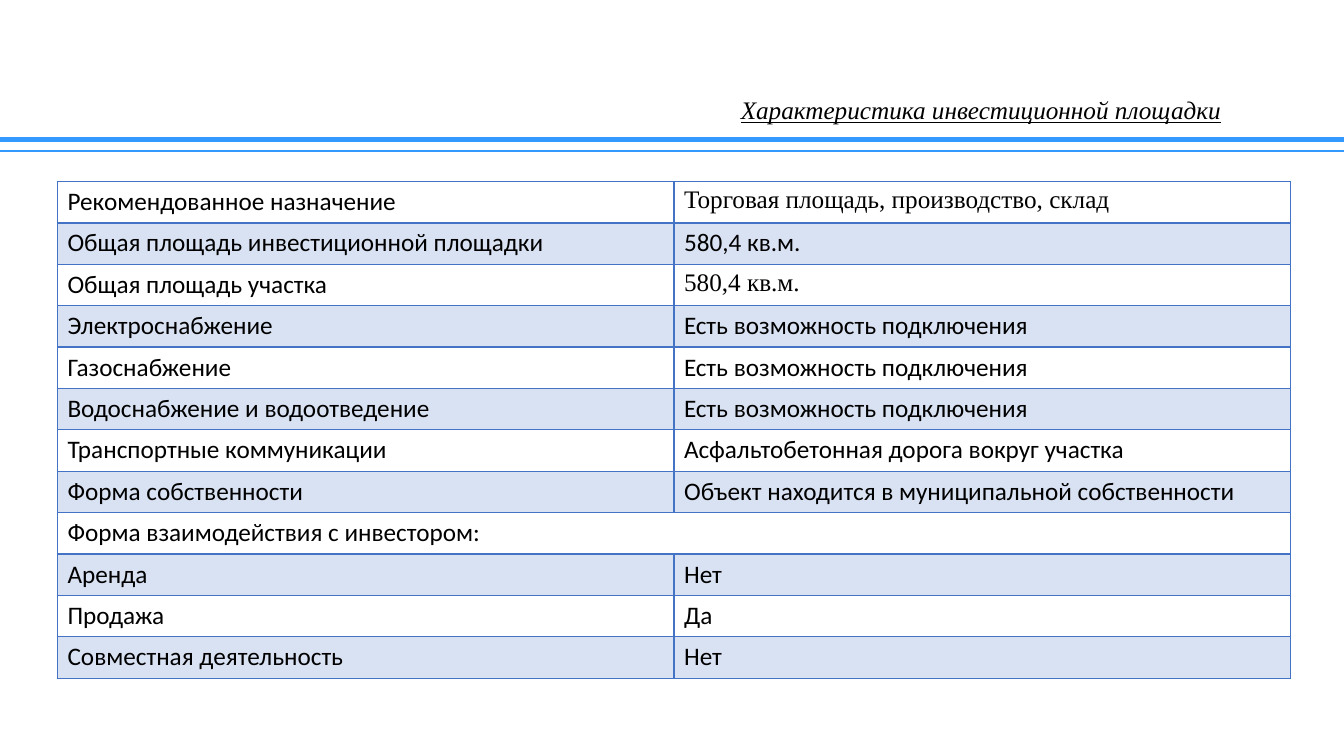
from lxml.etree import SubElement
from pptx import Presentation
from pptx.dml.color import RGBColor
from pptx.enum.shapes import MSO_CONNECTOR
from pptx.enum.text import MSO_ANCHOR, MSO_AUTO_SIZE, PP_ALIGN
from pptx.oxml import parse_xml
from pptx.oxml.ns import nsdecls, qn
from pptx.util import Inches, Pt

COLORS = {"text": "000000", "rule": "3399FF", "grid": "4472C4"}
SANS, SERIF = "Calibri", "Times New Roman"
LINK = "Есть возможность подключения"
ROWS = [
    ("Рекомендованное назначение", "Торговая площадь, производство, склад"),
    ("Общая площадь инвестиционной площадки", "580,4 кв.м."),
    ("Общая площадь участка", "580,4 кв.м."),
    ("Электроснабжение", LINK),
    ("Газоснабжение", LINK),
    ("Водоснабжение и водоотведение", LINK),
    ("Транспортные коммуникации", "Асфальтобетонная дорога вокруг участка"),
    ("Форма собственности", "Объект находится в муниципальной собственности"),
    ("Форма взаимодействия с инвестором:",),
    ("Аренда", "Нет"),
    ("Продажа", "Да"),
    ("Совместная деятельность", "Нет"),
]
SERIF_CELLS = {(0, 1), (2, 1)}


def style(font, face):
    font.name = face
    font.size = Pt(18)
    font.color.rgb = RGBColor.from_string(COLORS["text"])


def add_title(slide, left, top, width, height):
    title = slide.shapes.title
    title.left, title.top = Inches(left), Inches(top)
    title.width, title.height = Inches(width), Inches(height)
    frame = title.text_frame
    frame.text = "Характеристика инвестиционной площадки"
    frame.auto_size = MSO_AUTO_SIZE.NONE
    frame.word_wrap = True
    frame.vertical_anchor = MSO_ANCHOR.MIDDLE
    frame.margin_top = frame.margin_bottom = 0
    para = frame.paragraphs[0]
    para.alignment = PP_ALIGN.CENTER
    para.line_spacing = 0.9
    style(para.font, SERIF)
    para.font.italic = para.font.underline = True


def add_rules(slide, left, top, width, gap):
    for step, weight in enumerate((3.5, 1.5)):
        y = Inches(top + step * gap)
        rule = slide.shapes.add_connector(
            MSO_CONNECTOR.STRAIGHT, Inches(left), y, Inches(left + width), y)
        rule.line.color.rgb = RGBColor.from_string(COLORS["rule"])
        rule.line.width = Pt(weight)
        SubElement(rule._element.spPr, qn("a:effectLst"))


def set_edges(cell, row):
    props = cell._tc.get_or_add_tcPr()
    weights = {"L": 1, "R": 1, "T": 2 if row == 1 else 1, "B": 2 if row == 0 else 1}
    for index, (side, weight) in enumerate(weights.items()):
        props.insert(index, parse_xml(
            f'<a:ln{side} {nsdecls("a")} w="{Pt(weight)}"><a:solidFill>'
            f'<a:srgbClr val="{COLORS["grid"]}"/></a:solidFill></a:ln{side}>'))


def set_fill(cell, banded):
    if not banded:
        cell.fill.background()
        return
    cell.fill.solid()
    cell.fill.fore_color.rgb = RGBColor.from_string(COLORS["grid"])
    tint = cell._tc.tcPr.find(f'{qn("a:solidFill")}/{qn("a:srgbClr")}')
    SubElement(tint, qn("a:alpha"), val="20000")


def add_facts(slide, left, top, width, height):
    frame = slide.shapes.add_table(
        len(ROWS), 2, Inches(left), Inches(top), Inches(width), Inches(height))
    table = frame.table
    table.first_row = table.horz_banding = False
    for row, texts in enumerate(ROWS):
        for col in range(2):
            cell = table.cell(row, col)
            set_fill(cell, row % 2)
            set_edges(cell, row)
            if col < len(texts):
                cell.text = texts[col]
            face = SERIF if (row, col) in SERIF_CELLS else SANS
            style(cell.text_frame.paragraphs[0].font, face)
        if len(texts) == 1:
            table.cell(row, 0).merge(table.cell(row, 1))


def main():
    deck = Presentation()
    wide, high = 13.33, 7.5
    deck.slide_width, deck.slide_height = Inches(wide), Inches(high)
    slide = deck.slides.add_slide(deck.slide_layouts[5])
    add_rules(slide, 0, 1.38, wide, 0.12)
    add_title(slide, wide / 2, 0.97, 6.13, 0.27)
    add_facts(slide, 0.57, 1.8, 12.23, 4.93)
    deck.save("out.pptx")


if __name__ == "__main__":
    main()
